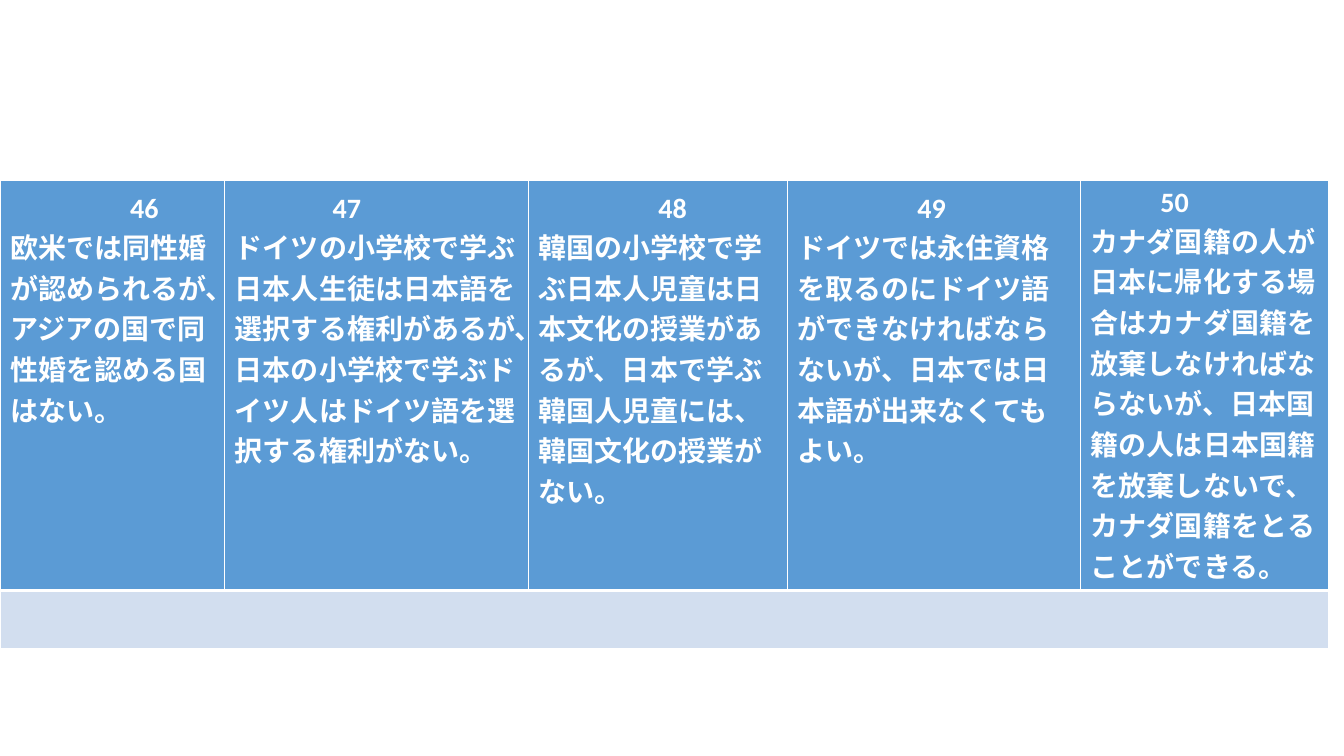
from dataclasses import dataclass

from lxml.etree import SubElement
from pptx import Presentation
from pptx.dml.color import RGBColor
from pptx.oxml.ns import qn
from pptx.util import Inches, Pt

STATEMENTS = [
    ("46", 2.23, 1.19, "欧米では同性婚が認められるが、アジアの国で同性婚を認める国はない。"),
    ("47", 3.01, 0.97, "ドイツの小学校で学ぶ日本人生徒は日本語を選択する権利があるが、"
                       "日本の小学校で学ぶドイツ人はドイツ語を選択する権利がない。"),
    ("48", 2.57, 1.19, "韓国の小学校で学ぶ日本人児童は日本文化の授業があるが、"
                       "日本で学ぶ韓国人児童には、韓国文化の授業がない。"),
    ("49", 2.91, 1.19, "ドイツでは永住資格を取るのにドイツ語ができなければならないが、"
                       "日本では日本語が出来なくてもよい。"),
    ("50", 2.46, 0.69, "カナダ国籍の人が日本に帰化する場合はカナダ国籍を放棄しなければならないが、"
                       "日本国籍の人は日本国籍を放棄しないで、カナダ国籍をとることができる。"),
]
TALL_NUMBERS = {"46", "47", "48", "49"}
ROW_HEIGHTS = (4.03, 0.58)
TABLE_TOP = 1.79


@dataclass(frozen=True)
class Theme:
    """Colours and type of the slide."""
    font: str = "Calibri"
    size: int = 20
    number_line: int = 29
    text: str = "FFFFFF"
    header: str = "5B9BD5"
    band: str = "D2DEEF"
    border: str = "FFFFFF"
    thin: int = 1
    thick: int = 3


THEME = Theme()


def style_cell(cell, colour, top, bottom):
    """Give a cell its borders and fill."""
    properties = cell._tc.get_or_add_tcPr()
    widths = {"L": THEME.thin, "R": THEME.thin, "T": top, "B": bottom}
    for side, width in widths.items():
        line = SubElement(properties, qn(f"a:ln{side}"), w=str(Pt(width)))
        fill = SubElement(line, qn("a:solidFill"))
        SubElement(fill, qn("a:srgbClr"), val=THEME.border)
    cell.fill.solid()
    cell.fill.fore_color.rgb = RGBColor.from_string(colour)


def write_statement(cell, number, indent, statement):
    """Write the indented number and the statement below it."""
    frame = cell.text_frame
    frame.text = f"{number}\n{statement}"
    for paragraph in frame.paragraphs:
        font = paragraph.font
        font.name, font.size, font.bold = THEME.font, Pt(THEME.size), True
        font.color.rgb = RGBColor.from_string(THEME.text)
    heading = frame.paragraphs[0]
    heading._p.get_or_add_pPr().set("indent", str(Inches(indent)))
    if number in TALL_NUMBERS:
        heading.line_spacing = Pt(THEME.number_line)


def main():
    """Build the slide with its table of statements."""
    presentation = Presentation()
    presentation.slide_width, presentation.slide_height = Inches(13.33), Inches(7.5)
    slide = presentation.slides.add_slide(presentation.slide_layouts[6])
    width = sum(column_width for _, column_width, _, _ in STATEMENTS)
    table = slide.shapes.add_table(
        len(ROW_HEIGHTS), len(STATEMENTS), Inches(0), Inches(TABLE_TOP),
        Inches(width), Inches(sum(ROW_HEIGHTS))).table
    for row, height in zip(table.rows, ROW_HEIGHTS):
        row.height = Inches(height)
    for index, (number, column_width, indent, statement) in enumerate(STATEMENTS):
        table.columns[index].width = Inches(column_width)
        write_statement(table.cell(0, index), number, indent, statement)
        style_cell(table.cell(0, index), THEME.header, THEME.thin, THEME.thick)
        style_cell(table.cell(1, index), THEME.band, THEME.thick, THEME.thin)
    table.cell(1, 0).merge(table.cell(1, len(STATEMENTS) - 1))
    presentation.save("out.pptx")


if __name__ == "__main__":
    main()
